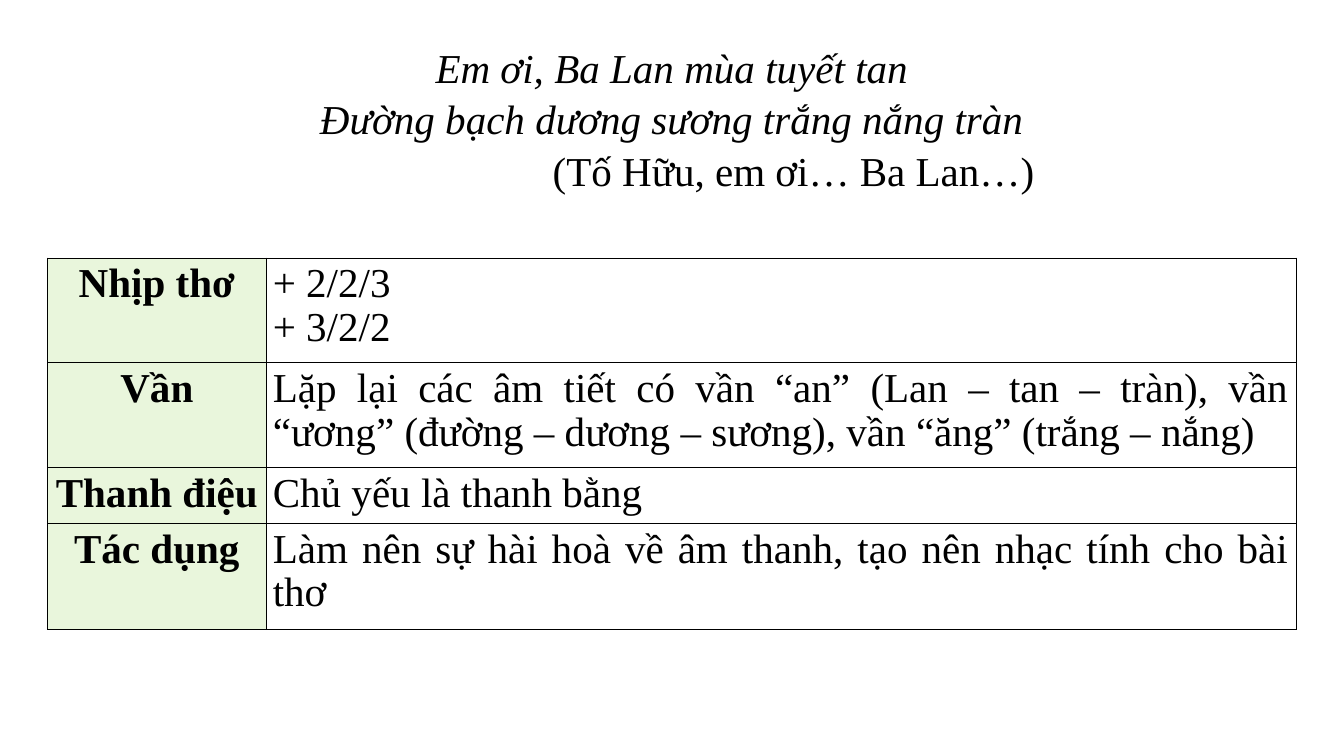
from lxml import etree
from pptx import Presentation
from pptx.dml.color import RGBColor
from pptx.enum.text import MSO_AUTO_SIZE, PP_ALIGN
from pptx.oxml.ns import qn
from pptx.util import Inches, Pt

CENTER, RIGHT, JUSTIFY = PP_ALIGN.CENTER, PP_ALIGN.RIGHT, PP_ALIGN.JUSTIFY
FIT_SHAPE = MSO_AUTO_SIZE.SHAPE_TO_FIT_TEXT
BLACK = RGBColor(0x00, 0x00, 0x00)
PALE_GREEN = RGBColor(0xE9, 0xF6, 0xDC)
FONT = {"name": "Times New Roman", "size": Pt(44)}

VERSE = [
    ("Em ơi, Ba Lan mùa tuyết tan", CENTER, True),
    ("Đường bạch dương sương trắng nắng tràn", CENTER, True),
    ("(Tố Hữu, em ơi… Ba Lan…)", RIGHT, False),
]
# Label, lines of the analysis, row height in inches
ANALYSIS = [
    ("Nhịp thơ", ["+ 2/2/3", "+ 3/2/2"], 1.56),
    ("Vần", ["Lặp lại các âm tiết có vần “an” (Lan – tan – tràn), vần “ương” "
             "(đường – dương – sương), vần “ăng” (trắng – nắng)"], 1.56),
    ("Thanh điệu", ["Chủ yếu là thanh bằng"], 0.83),
    ("Tác dụng", ["Làm nên sự hài hoà về âm thanh, tạo nên nhạc tính cho bài thơ"], 1.58),
]
COLUMN_WIDTHS = (3.25, 15.33)


def write_paragraph(frame, index, text, alignment, spacing, **font_format):
    paragraph = frame.paragraphs[0] if index == 0 else frame.add_paragraph()
    paragraph.alignment = alignment
    paragraph.line_spacing = spacing
    run = paragraph.add_run()
    run.text = text
    for name, value in {**FONT, **font_format}.items():
        setattr(run.font, name, value)
    run.font.color.rgb = BLACK


def add_verse(slide):
    shape = slide.shapes.add_textbox(Inches(4.5), Inches(0.54), Inches(11), Inches(2.32))
    frame = shape.text_frame
    frame.word_wrap = True
    frame.auto_size = FIT_SHAPE
    for index, (text, alignment, italic) in enumerate(VERSE):
        write_paragraph(frame, index, text, alignment, 1.05, italic=italic)


def add_borders(cell):
    properties = cell._tc.get_or_add_tcPr()
    for position, side in enumerate(("lnL", "lnR", "lnT", "lnB")):
        line = etree.Element(qn(f"a:{side}"), w=str(Pt(1)))
        fill = etree.SubElement(line, qn("a:solidFill"))
        etree.SubElement(fill, qn("a:srgbClr"), val=str(BLACK))
        properties.insert(position, line)


def fill_cell(cell, lines, alignment, bold, color=None):
    cell.margin_top = Inches(0.07)
    for index, text in enumerate(lines):
        write_paragraph(cell.text_frame, index, text, alignment, 0.96, bold=bold)
    if color is None:
        cell.fill.background()
    else:
        cell.fill.solid()
        cell.fill.fore_color.rgb = color
    add_borders(cell)


def add_analysis(slide):
    height = sum(row[2] for row in ANALYSIS)
    table = slide.shapes.add_table(
        len(ANALYSIS), len(COLUMN_WIDTHS), Inches(0.71), Inches(3.84),
        Inches(sum(COLUMN_WIDTHS)), Inches(height)).table
    table.first_row = table.horz_banding = False
    for column, width in zip(table.columns, COLUMN_WIDTHS):
        column.width = Inches(width)
    for row, (label, lines, row_height) in zip(table.rows, ANALYSIS):
        row.height = Inches(row_height)
        fill_cell(row.cells[0], [label], CENTER, True, PALE_GREEN)
        fill_cell(row.cells[1], lines, JUSTIFY, False)


def main():
    presentation = Presentation()
    presentation.slide_width = Inches(20)
    presentation.slide_height = Inches(11.25)
    slide = presentation.slides.add_slide(presentation.slide_layouts[6])
    # Quoted verse above, its analysis below
    add_verse(slide)
    add_analysis(slide)
    presentation.save("out.pptx")


if __name__ == "__main__":
    main()
